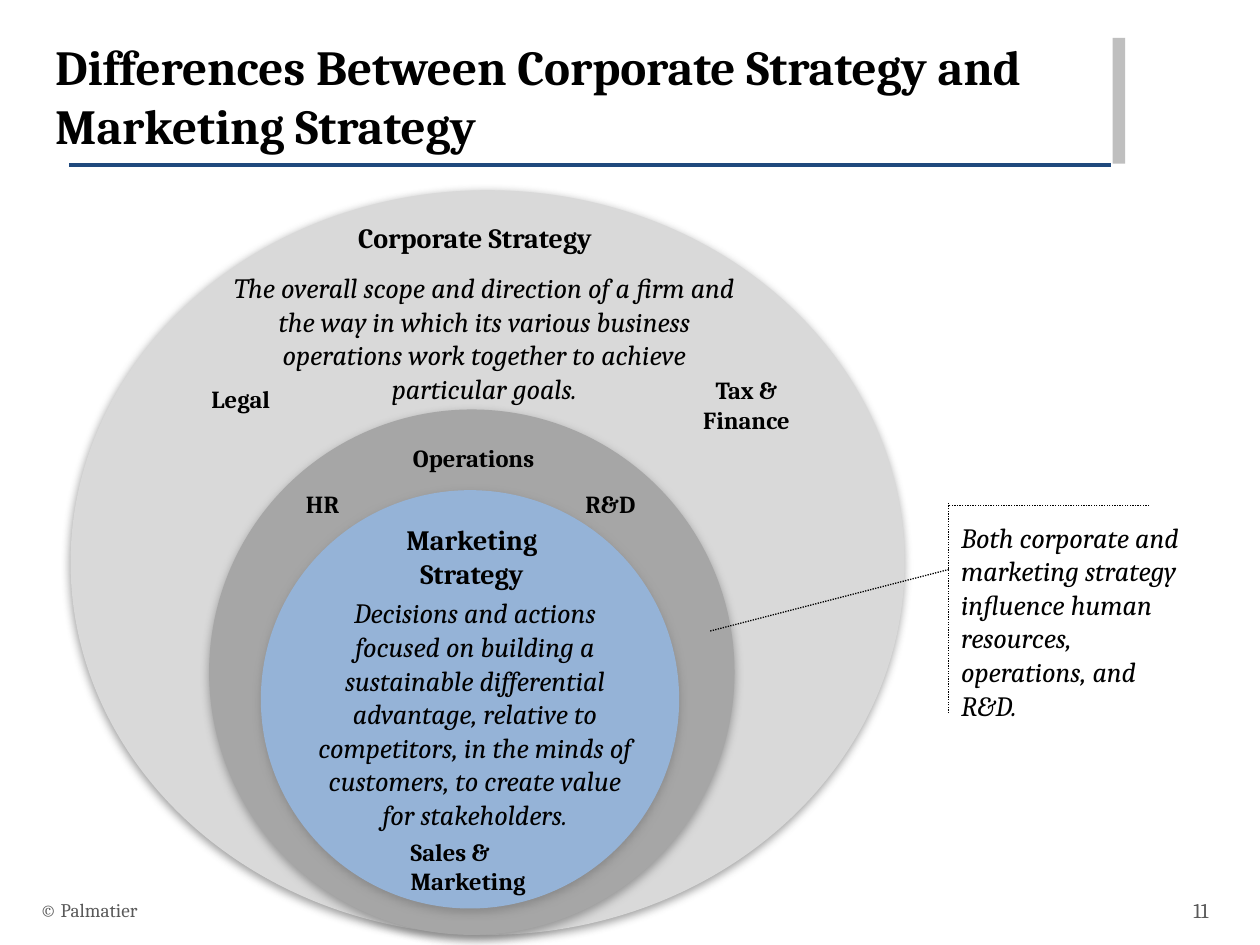
from typing import NamedTuple

from lxml.etree import SubElement
from pptx import Presentation
from pptx.dml.color import RGBColor
from pptx.enum.dml import MSO_LINE
from pptx.enum.shapes import MSO_CONNECTOR, MSO_SHAPE
from pptx.enum.text import MSO_ANCHOR as Anchor
from pptx.enum.text import MSO_AUTO_SIZE as AutoSize
from pptx.enum.text import PP_ALIGN as Align
from pptx.oxml.ns import qn
from pptx.util import Pt

PX = 9144  # 100 px to the inch
FONT = "Cambria"
BLACK, GREY_TEXT = "000000", "595959"


class Box(NamedTuple):
    left: int
    top: int
    width: int
    height: int


class Ring(NamedTuple):
    box: Box
    color: str


class Label(NamedTuple):
    text: str
    box: Box
    size: int = 14
    bold: bool = True
    italic: bool = False
    align: Align = Align.CENTER
    color: str = BLACK
    anchor: Anchor = Anchor.TOP
    grow: bool = True


class Rule(NamedTuple):
    start: tuple[int, int]
    end: tuple[int, int]
    color: str = BLACK
    width: float = 0.75
    dotted: bool = True


def rgb(color: str) -> RGBColor:
    return RGBColor.from_string(color)


def emu(lengths) -> list[int]:
    return [length * PX for length in lengths]


def draw_solid(slide, kind: MSO_SHAPE, box: Box, color: str):
    solid = slide.shapes.add_shape(kind, *emu(box))
    solid.shadow.inherit = False
    solid.fill.solid()
    solid.fill.fore_color.rgb = rgb(color)
    solid.line.fill.background()
    return solid


def draw_ring(slide, ring: Ring) -> None:
    ellipse = draw_solid(slide, MSO_SHAPE.OVAL, ring.box, ring.color)
    effects = ellipse._element.spPr.find(qn("a:effectLst"))
    shadow = SubElement(effects, qn("a:outerShdw"), blurRad=str(Pt(5)), dist=str(Pt(2)),
                        dir="5400000", rotWithShape="0")
    tint = SubElement(shadow, qn("a:srgbClr"), val="808080")
    SubElement(tint, qn("a:alpha"), val="75000")


def draw_label(slide, label: Label) -> None:
    frame = slide.shapes.add_textbox(*emu(label.box)).text_frame
    frame.word_wrap = True
    frame.auto_size = AutoSize.SHAPE_TO_FIT_TEXT if label.grow else AutoSize.NONE
    frame.vertical_anchor = label.anchor
    frame.text = label.text
    paragraph = frame.paragraphs[0]
    paragraph.alignment = label.align
    font = paragraph.runs[0].font
    font.name, font.size = FONT, Pt(label.size)
    font.bold, font.italic = label.bold, label.italic
    font.color.rgb = rgb(label.color)


def draw_rule(slide, rule: Rule) -> None:
    connector = slide.shapes.add_connector(MSO_CONNECTOR.STRAIGHT, *emu(rule.start + rule.end))
    SubElement(connector._element.spPr, qn("a:effectLst"))
    connector.line.color.rgb = rgb(rule.color)
    connector.line.width = Pt(rule.width)
    if rule.dotted:
        connector.line.dash_style = MSO_LINE.ROUND_DOT


def definition(text: str, box: Box, align: Align = Align.CENTER) -> Label:
    return Label(text, box, size=16, bold=False, italic=True, align=align)


def footer(text: str, box: Box, size: int, align: Align) -> Label:
    return Label(text, box, size, bold=False, align=align, color=GREY_TEXT,
                 anchor=Anchor.MIDDLE, grow=False)


TITLE = Label("Differences Between Corporate Strategy and Marketing Strategy",
              Box(34, 24, 826, 88), size=28, align=Align.LEFT, grow=False)
TITLE_RULE = Rule((55, 131), (882, 131), "1F497D", 2, dotted=False)
TITLE_BAR = Box(883, 30, 10, 100)

# Nested strategy levels, outermost first
RINGS = [
    Ring(Box(56, 151, 662, 591), "D9D9D9"),
    Ring(Box(166, 325, 417, 417), "A6A6A6"),
    Ring(Box(207, 389, 332, 332), "95B3D7"),
]

LABELS = [
    # Strategies and their definitions
    Label("Corporate Strategy", Box(258, 170, 238, 37), size=16),
    definition("The overall scope and direction of a firm and the way in which its various "
               "business operations work together to achieve particular goals.",
               Box(168, 210, 433, 138)),
    Label("Marketing Strategy", Box(302, 410, 145, 64), size=16),
    definition("Decisions and actions focused on building a sustainable differential advantage, "
               "relative to competitors, in the minds of customers, to create value for "
               "stakeholders.", Box(239, 468, 276, 229)),
    # Business functions
    Label("Legal", Box(158, 300, 70, 34), align=Align.LEFT),
    Label("Tax & Finance", Box(534, 293, 117, 57)),
    Label("HR", Box(233, 383, 70, 34), align=Align.LEFT),
    Label("Operations", Box(276, 347, 200, 34)),
    Label("R&D", Box(426, 383, 117, 34)),
    Label("Sales & Marketing", Box(316, 659, 171, 57), align=Align.LEFT),
    # Callout
    definition("Both corporate and marketing strategy influence human resources, operations, "
               "and R&D.", Box(753, 408, 197, 172), Align.LEFT),
    # Footer
    footer("© Palmatier", Box(22, 702, 670, 40), 11, Align.LEFT),
    footer("11", Box(908, 702, 61, 40), 12, Align.RIGHT),
]

CALLOUT_RULES = [
    Rule((753, 566), (753, 399)),
    Rule((912, 401), (753, 401)),
    Rule((753, 452), (563, 501)),
]


def main() -> None:
    deck = Presentation()
    deck.slide_width, deck.slide_height = emu((1000, 750))
    slide = deck.slides.add_slide(deck.slide_layouts[6])

    # Heading
    draw_rule(slide, TITLE_RULE)
    draw_solid(slide, MSO_SHAPE.RECTANGLE, TITLE_BAR, "BFBFBF")
    draw_label(slide, TITLE)

    # Diagram
    for ring in RINGS:
        draw_ring(slide, ring)
    for label in LABELS:
        draw_label(slide, label)
    for rule in CALLOUT_RULES:
        draw_rule(slide, rule)

    deck.save("out.pptx")


if __name__ == "__main__":
    main()
